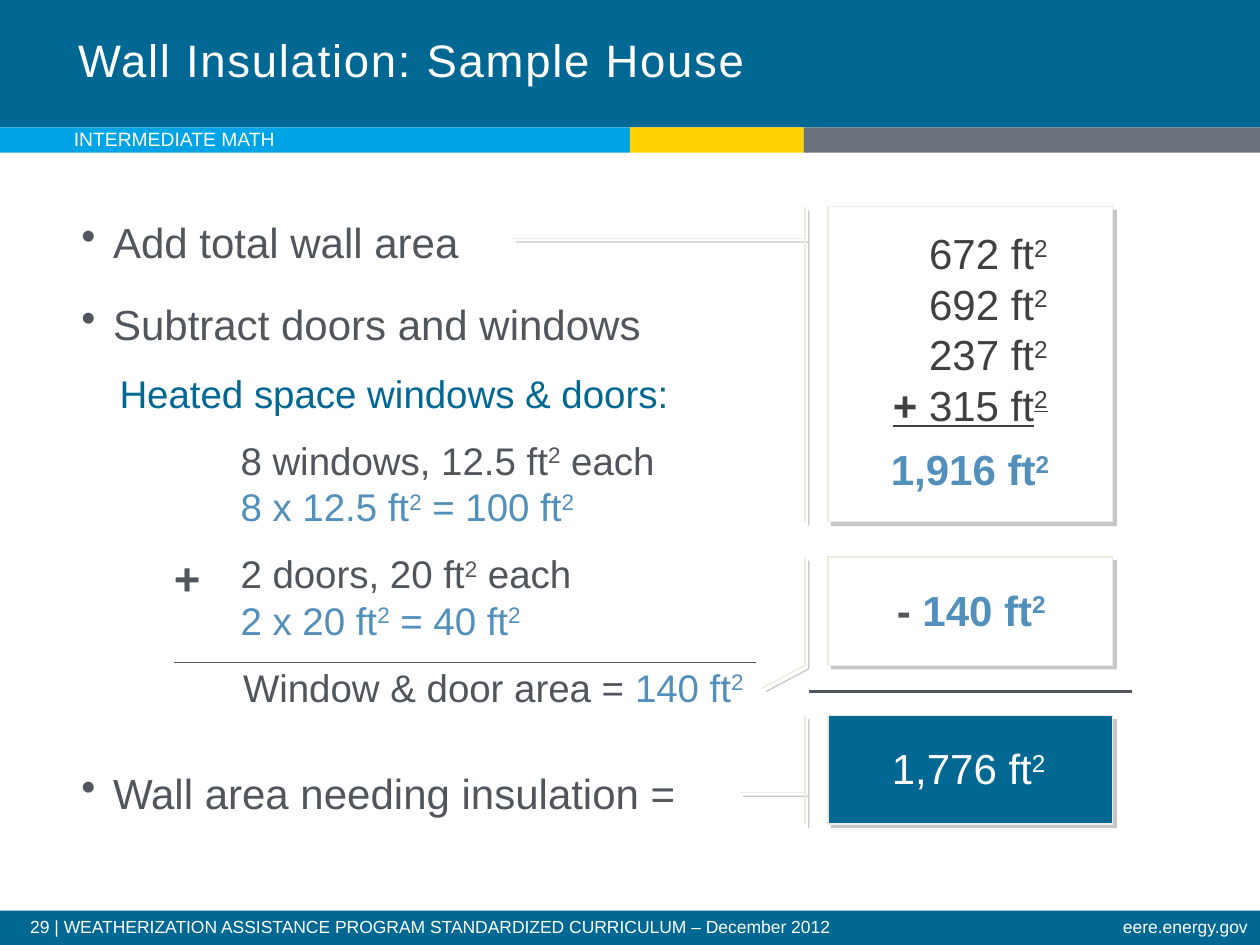
from lxml.etree import SubElement
from pptx import Presentation
from pptx.dml.color import RGBColor
from pptx.enum.shapes import MSO_CONNECTOR, MSO_SHAPE
from pptx.enum.text import MSO_ANCHOR, PP_ALIGN
from pptx.oxml.ns import qn
from pptx.util import Cm, Pt

TEAL = RGBColor(0x00, 0x68, 0x92)
SKY = RGBColor(0x00, 0xA4, 0xE4)
YELLOW = RGBColor(0xFF, 0xD2, 0x00)
GRAY = RGBColor(0x6A, 0x73, 0x7B)
SLATE = RGBColor(0x50, 0x56, 0x5C)
CHARCOAL = RGBColor(0x40, 0x40, 0x40)
BLUE = RGBColor(0x52, 0x8F, 0xBA)
CREAM = RGBColor(0xEE, 0xEC, 0xE1)
WHITE = RGBColor(0xFF, 0xFF, 0xFF)

SLIDE_WIDTH, SLIDE_HEIGHT = 25.4, 19.05


def add_runs(paragraph, text, size, color, bold=False, underline=False):
    """Add text as runs; parts between carets are superscript."""
    for index, part in enumerate(text.split("^")):
        if not part:
            continue
        run = paragraph.add_run()
        run.text = part
        font = run.font
        font.name, font.size, font.color.rgb = "Arial", Pt(size), color
        font.bold, font.underline = bold, underline
        if index % 2:
            run._r.get_or_add_rPr().set("baseline", "30000")


def add_text_box(shapes, left, top, width, height, wrap=True):
    frame = shapes.add_textbox(Cm(left), Cm(top), Cm(width), Cm(height)).text_frame
    frame.word_wrap = wrap
    return frame


def add_bar(shapes, left, top, width, height, color):
    shape = shapes.add_shape(MSO_SHAPE.RECTANGLE, Cm(left), Cm(top), Cm(width), Cm(height))
    shape.shadow.inherit = False
    shape.fill.solid()
    shape.fill.fore_color.rgb = color
    shape.line.fill.background()


def add_rule(shapes, left, top, width, weight):
    line = shapes.add_connector(
        MSO_CONNECTOR.STRAIGHT, Cm(left), Cm(top), Cm(left + width), Cm(top))
    line.line.color.rgb = SLATE
    line.line.width = Pt(weight)
    SubElement(line._element.spPr, qn("a:effectLst"))


def add_header(slide, left, top, width, height):
    # Title band and three-colour strip
    add_bar(slide.shapes, left, top, width, height, TEAL)
    strip_left = left
    for strip_width, color in ((12.7, SKY), (3.5, YELLOW), (9.2, GRAY)):
        add_bar(slide.shapes, strip_left, top + height, strip_width, 0.51, color)
        strip_left += strip_width
    section = add_text_box(slide.shapes, left + 1.24, top + height - 0.13, 9.58, 0.86)
    add_runs(section.paragraphs[0], "INTERMEDIATE MATH", 11, WHITE)

    # Title placeholder, raised above the band
    title = slide.shapes.title
    title.left, title.top = Cm(left + 1.32), Cm(top)
    title.width, title.height = Cm(14.91), Cm(2.51)
    title.text_frame.vertical_anchor = MSO_ANCHOR.MIDDLE
    paragraph = title.text_frame.paragraphs[0]
    paragraph.alignment = PP_ALIGN.LEFT
    paragraph.line_spacing = Pt(28)
    add_runs(paragraph, "Wall Insulation: Sample House", 26, WHITE)
    paragraph.runs[0]._r.get_or_add_rPr().set("spc", "100")
    slide.shapes._spTree.append(title._element)


def add_footer(slide, left, top, width, height):
    add_bar(slide.shapes, left, top, width, height, TEAL)
    credit = "29 | WEATHERIZATION ASSISTANCE PROGRAM STANDARDIZED CURRICULUM – December 2012"
    for offset, box_width, alignment, text in (
            (0.36, 20.24, PP_ALIGN.LEFT, credit),
            (15.21, 10.19, PP_ALIGN.RIGHT, "eere.energy.gov")):
        frame = add_text_box(slide.shapes, left + offset, top + 0.03, box_width, 0.66)
        paragraph = frame.paragraphs[0]
        paragraph.alignment = alignment
        paragraph.line_spacing = 0.9
        add_runs(paragraph, text, 10, WHITE)


def add_steps(slide, left, top, width, height):
    # Each step: left margin, bullet, space before, space after, size, lines of runs
    steps = (
        (0.76, True, 0, 12, 24, [[("Add total wall area", SLATE)]]),
        (0.76, True, 6, 6, 24, [[("Subtract doors and windows", SLATE)]]),
        (0.89, False, 6, 6, 22, [[("Heated space windows & doors:", TEAL)]]),
        (3.33, False, 6, 6, 22, [[("8 windows, 12.5 ft^2^ each", SLATE)],
                                 [("8 x 12.5 ft^2^ = 100 ft^2", BLUE)]]),
        (3.33, False, 6, 6, 22, [[("2 doors, 20 ft^2^ each", SLATE)],
                                 [("2 x 20 ft^2^ = 40 ft^2", BLUE)]]),
        (3.38, False, 6, 6, 22, [[("Window & door area = ", SLATE), ("140 ft^2", BLUE)]]),
        (0.76, True, 27, 6, 24, [[("Wall area needing insulation =", SLATE)]]),
    )
    frame = add_text_box(slide.shapes, left, top, width, height)
    for index, (margin, bullet, before, after, size, lines) in enumerate(steps):
        paragraph = frame.add_paragraph() if index else frame.paragraphs[0]
        properties = paragraph._p.get_or_add_pPr()
        properties.set("marL", str(Cm(margin)))
        properties.set("indent", str(Cm(-0.64) if bullet else 0))
        if bullet:
            SubElement(properties, qn("a:buChar")).set("char", "•")
        paragraph.space_before, paragraph.space_after = Pt(before), Pt(after)
        for number, line in enumerate(lines):
            if number:
                paragraph.add_line_break()
            for text, color in line:
                add_runs(paragraph, text, size, color)

    # Plus sign and rule of the subtotal
    add_rule(slide.shapes, left + 2.24, top + 9.12, 11.73, 0.75)
    plus = add_text_box(slide.shapes, left + 1.6, top + 6.73, 1.42, 1.37)
    plus.paragraphs[0].alignment = PP_ALIGN.RIGHT
    add_runs(plus.paragraphs[0], "+", 26, SLATE, bold=True)


def add_callout(shapes, left, top, width, height, color, adjustments):
    shape = shapes.add_shape(MSO_SHAPE.LINE_CALLOUT_1_BORDER_AND_ACCENT_BAR,
                             Cm(left), Cm(top), Cm(width), Cm(height))
    for index, value in enumerate(adjustments):
        shape.adjustments[index] = value
    shape.fill.solid()
    shape.fill.fore_color.rgb = color
    shape.line.color.rgb = CREAM
    shape.line.width = Pt(0.75)
    # Offset gray shadow
    shape.shadow.inherit = False
    effects = shape._element.spPr.find(qn("a:effectLst"))
    shadow = SubElement(effects, qn("a:outerShdw"), blurRad="0", dist=str(Pt(3)),
                        dir="2700000", algn="ctr", rotWithShape="0")
    shadow_color = SubElement(shadow, qn("a:srgbClr"), val="808080")
    SubElement(shadow_color, qn("a:alpha"), val="43000")


def add_wall_total(slide, left, top, width, height):
    shapes = slide.shapes.add_group_shape().shapes
    add_callout(shapes, left, top, width, height, WHITE, (0.1, -0.08, 0.1, -1.11))
    frame = add_text_box(shapes, left + 0.97, top + 0.3, 3.71, 4.37)
    for index, text in enumerate(("672 ft^2", "692 ft^2", "237 ft^2", " 315 ft^2")):
        paragraph = frame.add_paragraph() if index else frame.paragraphs[0]
        paragraph.alignment = PP_ALIGN.RIGHT
        last = index == 3
        if last:
            add_runs(paragraph, "+", 24, CHARCOAL, bold=True, underline=True)
        add_runs(paragraph, text, 24, CHARCOAL, underline=last)
    total = add_text_box(shapes, left + 1.02, top + 4.65, 3.78, 1.27, wrap=False)
    add_runs(total.paragraphs[0], "1,916 ft^2", 24, BLUE, bold=True)


def add_result(slide, left, top, width, height, color, adjustments, offset, runs):
    shapes = slide.shapes.add_group_shape().shapes
    add_callout(shapes, left, top, width, height, color, adjustments)
    frame = add_text_box(shapes, left + offset, top + 0.42, 3.7, 1.28, wrap=False)
    for text, text_color, bold in runs:
        add_runs(frame.paragraphs[0], text, 24, text_color, bold)


def main():
    presentation = Presentation()
    presentation.slide_width, presentation.slide_height = Cm(SLIDE_WIDTH), Cm(SLIDE_HEIGHT)
    slide = presentation.slides.add_slide(presentation.slide_layouts[5])

    add_header(slide, 0, 0, SLIDE_WIDTH, 2.57)
    add_footer(slide, 0, 18.36, SLIDE_WIDTH, 0.69)
    add_steps(slide, 1.27, 4.24, 14.45, 12.5)

    # Column of sums
    column_left, column_width = 16.69, 5.74
    add_wall_total(slide, column_left, 4.17, column_width, 6.35)
    add_result(slide, column_left, 11.23, column_width, 2.18, WHITE,
               (1, -0.08, 1.21, -0.23), 1.14,
               [("-", SLATE, True), (" 140 ft^2", BLUE, True)])
    add_rule(slide.shapes, 16.31, 13.94, 6.52, 2.25)
    add_result(slide, column_left, 14.43, column_width, 2.18, TEAL,
               (0.71, -0.08, 0.71, -0.31), 1.04, [("1,776 ft^2", WHITE, False)])

    presentation.save("out.pptx")


if __name__ == "__main__":
    main()
